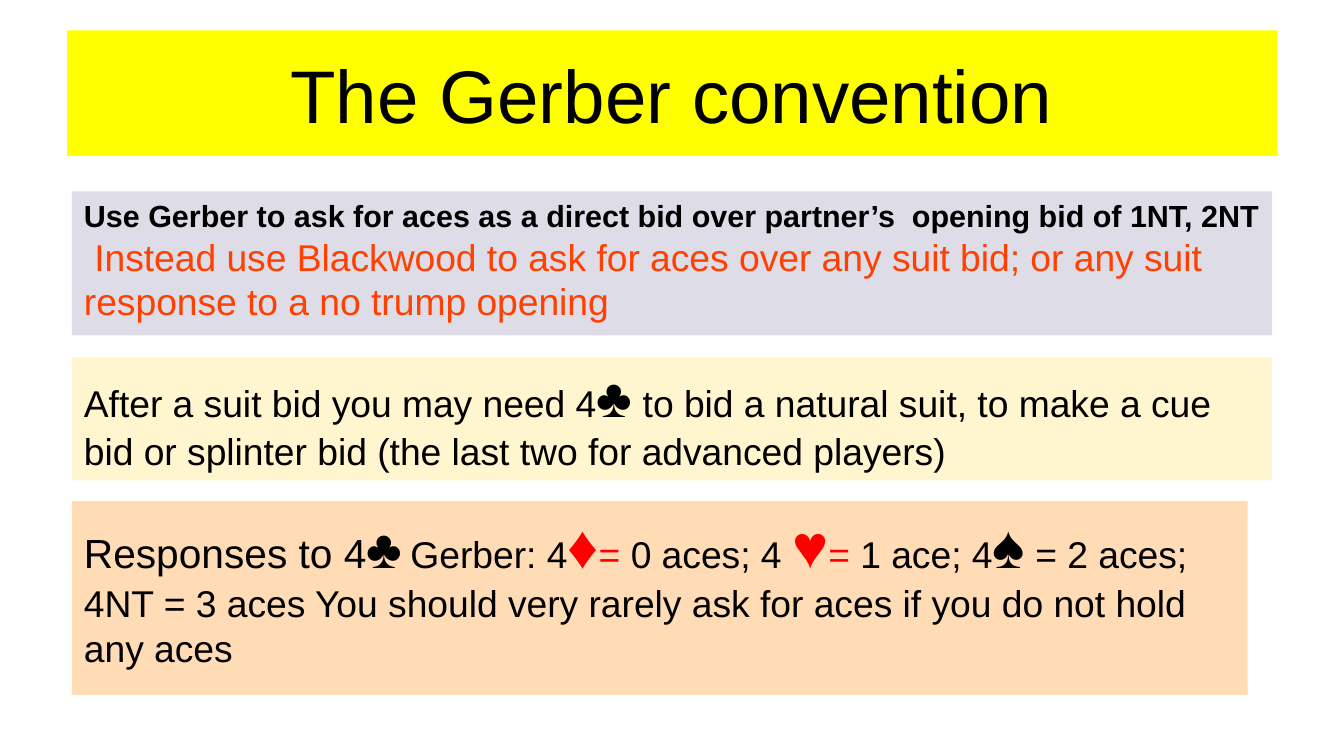
from pptx import Presentation
from pptx import util as u
from pptx.dml import color
from pptx.enum import shapes, text

BLACK, RED, ORANGE = "000000", "FF0000", "FF4000"


def rgb(value):
    return color.RGBColor.from_string(value)


def run(words, size=22, ink=BLACK, bold=False):
    """Describe one stretch of text in a single format."""
    return words, {"size": u.Pt(size), "bold": bold, "name": "Arial"}, ink


class Deck:
    def __init__(self, width, height):
        self.presentation = Presentation()
        self.presentation.slide_width = u.Inches(width)
        self.presentation.slide_height = u.Inches(height)
        self.slide = self.presentation.slides.add_slide(self.presentation.slide_layouts[6])

    def panel(self, box, fill, paragraphs, insets=(0.1, 0.05),
              anchor=text.MSO_ANCHOR.TOP, align=text.PP_ALIGN.LEFT):
        """Add a filled rectangle whose paragraphs are lists of runs."""
        shape = self.slide.shapes.add_shape(
            shapes.MSO_SHAPE.RECTANGLE, *(u.Inches(length) for length in box))
        shape.shadow.inherit = False
        shape.fill.solid()
        shape.fill.fore_color.rgb = rgb(fill)
        shape.line.fill.background()
        frame = shape.text_frame
        across, down = (u.Inches(inset) for inset in insets)
        frame_format = {"word_wrap": True, "vertical_anchor": anchor,
                        "margin_left": across, "margin_right": across,
                        "margin_top": down, "margin_bottom": down}
        for name, value in frame_format.items():
            setattr(frame, name, value)
        for index, runs in enumerate(paragraphs):
            paragraph = frame.add_paragraph() if index else frame.paragraphs[0]
            paragraph.alignment = align
            for words, font_format, ink in runs:
                piece = paragraph.add_run()
                piece.text = words
                for name, value in font_format.items():
                    setattr(piece.font, name, value)
                piece.font.color.rgb = rgb(ink)


def main():
    deck = Deck(11.02, 6.2)
    deck.panel((0.55, 0.25, 9.92, 1.03), "FFFF00", [[run("The Gerber convention", 44)]],
               insets=(0, 0), anchor=text.MSO_ANCHOR.MIDDLE, align=text.PP_ALIGN.CENTER)

    left = 0.59
    deck.panel((left, 1.57, 9.84, 1.18), "DEDCE6", [
        [run("Use Gerber to ask for aces as a direct bid over partner’s  "
             "opening bid of 1NT, 2NT", 18, bold=True)],
        [run(" Instead use Blackwood to ask for aces over any suit bid; "
             "or any suit response to a no trump opening", ink=ORANGE)],
    ])

    club = run("♣", 32, bold=True)
    deck.panel((left, 2.93, 9.84, 1.01), "FFF5CE", [[
        run("After a suit bid you may need 4"),
        club,
        run(" to bid a natural suit, to make a cue bid or splinter bid "
            "(the last two for advanced players)"),
    ]])

    equals = run("= ", ink=RED)
    deck.panel((left, 4.11, 9.64, 1.59), "FFDBB6", [[
        run("Responses to 4", 24),
        club,
        run(" ", 18),
        run("Gerber: 4"),
        run("♦", 36, RED, bold=True),
        equals,
        run("0 aces; 4 "),
        run("♥", 36, RED, bold=True),
        equals,
        run("1 ace; 4"),
        run("♠", 36),
        run(" = 2 aces; 4NT = 3 aces You should very rarely ask for aces "
            "if you do not hold any aces"),
    ]])
    deck.presentation.save("out.pptx")


if __name__ == "__main__":
    main()
